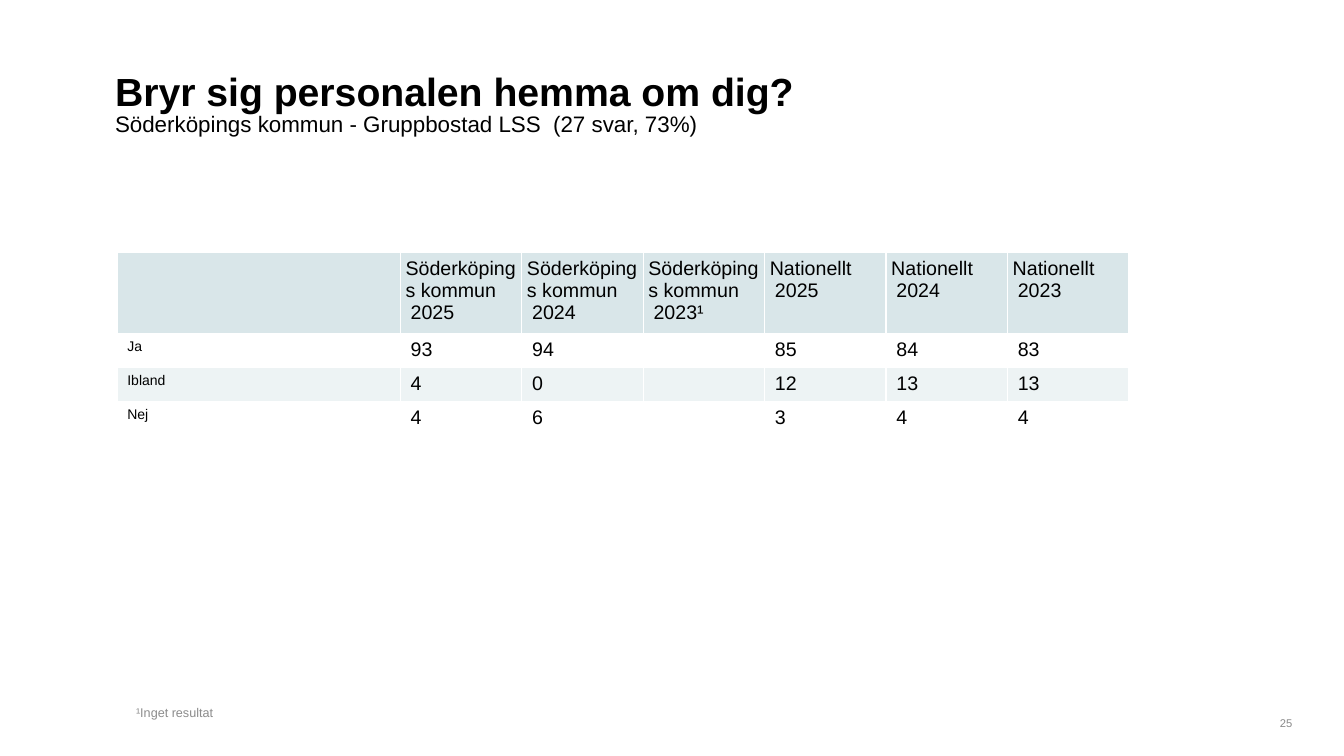
from lxml import etree
from pptx import Presentation
from pptx.dml.color import RGBColor
from pptx.enum.text import MSO_ANCHOR, MSO_AUTO_SIZE, PP_ALIGN
from pptx.oxml.ns import qn
from pptx.util import Cm, Pt

TOP, BOTTOM = MSO_ANCHOR.TOP, MSO_ANCHOR.BOTTOM
LEFT, RIGHT = PP_ALIGN.LEFT, PP_ALIGN.RIGHT
GROW, FIXED = MSO_AUTO_SIZE.SHAPE_TO_FIT_TEXT, MSO_AUTO_SIZE.NONE
COLOR = {"ink": "000000", "note": "8C8C8C", "page": "898989",
         "head": "D9E6E9", "band": "EDF3F4", "white": "FFFFFF"}
PAD = Cm(0.13)

deck = Presentation()
deck.slide_width, deck.slide_height = Cm(33.87), Cm(19.05)
slide = deck.slides.add_slide(deck.slide_layouts[6])


def write(frame, text, size=14, color="ink", bold=False, align=LEFT, indents=(0,)):
    """Fill a text frame, one paragraph per line of text."""
    for i, line in enumerate(text.split("\n")):
        para = frame.paragraphs[0] if i == 0 else frame.add_paragraph()
        para.alignment = align
        para._p.get_or_add_pPr().set("marL", str(indents[i]))
        if not line:
            etree.SubElement(para._p, qn("a:endParaRPr")).set("sz", str(size * 100))
            continue
        run = para.add_run()
        run.text = line
        run.font.name = "Arial"
        run.font.size = Pt(size)
        run.font.bold = bold
        run.font.color.rgb = RGBColor.from_string(COLOR[color])


def edge(cell):
    """Draw white borders around a cell."""
    props = cell._tc.get_or_add_tcPr()
    for i, side in enumerate(("a:lnL", "a:lnR", "a:lnT", "a:lnB")):
        line = etree.Element(qn(side), w=str(Pt(1)))
        fill = etree.SubElement(line, qn("a:solidFill"))
        etree.SubElement(fill, qn("a:srgbClr"), val=COLOR["white"])
        props.insert(i, line)


# Heading, footnote and page number
boxes = [
    ("Bryr sig personalen hemma om dig?", (2.65, 1.57, 28.58, 1.07),
     TOP, GROW, False, dict(size=28, bold=True)),
    ("Söderköpings kommun - Gruppbostad LSS  (27 svar, 73%)", (2.65, 2.64, 28.58, 1.07),
     TOP, GROW, True, dict(size=16)),
    ("¹Inget resultat", (3.18, 8.2, 19.3, 10.06),
     BOTTOM, FIXED, True, dict(size=9, color="note")),
    ("25", (31.75, 17.98, 1.07, 0.53),
     BOTTOM, FIXED, True, dict(size=8, color="page", align=RIGHT)),
]
for text, place, anchor, fit, wrap, style in boxes:
    frame = slide.shapes.add_textbox(*map(Cm, place)).text_frame
    frame.word_wrap = wrap
    frame.auto_size = fit
    frame.vertical_anchor = anchor
    write(frame, text, **style)

# Result table
towns = ["Söderköpings kommun\n" + year for year in ("2025", "2024", "2023¹")]
nation = ["Nationellt\n" + year for year in ("2025", "2024", "2023")]
rows = [
    ["", *towns, *nation],
    ["Ja", "93", "94", "", "85", "84", "83"],
    ["Ibland", "4", "0", "", "12", "13", "13"],
    ["Nej", "4", "6", "", "3", "4", "4"],
]
widths = [7.14] + [3.06] * 6
heights = [2.03] + [0.86] * 3
fills = ["head", None, "band", None]

table = slide.shapes.add_table(len(rows), len(widths), Cm(2.95), Cm(6.36),
                               Cm(sum(widths)), Cm(sum(heights))).table
for column, width in zip(table.columns, widths):
    column.width = Cm(width)
for r, row in enumerate(rows):
    table.rows[r].height = Cm(heights[r])
    for c, text in enumerate(row):
        cell = table.cell(r, c)
        cell.margin_left = cell.margin_right = PAD
        cell.margin_top = cell.margin_bottom = PAD
        if fills[r]:
            cell.fill.solid()
            cell.fill.fore_color.rgb = RGBColor.from_string(COLOR[fills[r]])
        else:
            cell.fill.background()
        edge(cell)
        write(cell.text_frame, text, size=10 if c == 0 else 14,
              indents=(0, PAD) if r == 0 else (PAD,))

deck.save("out.pptx")
